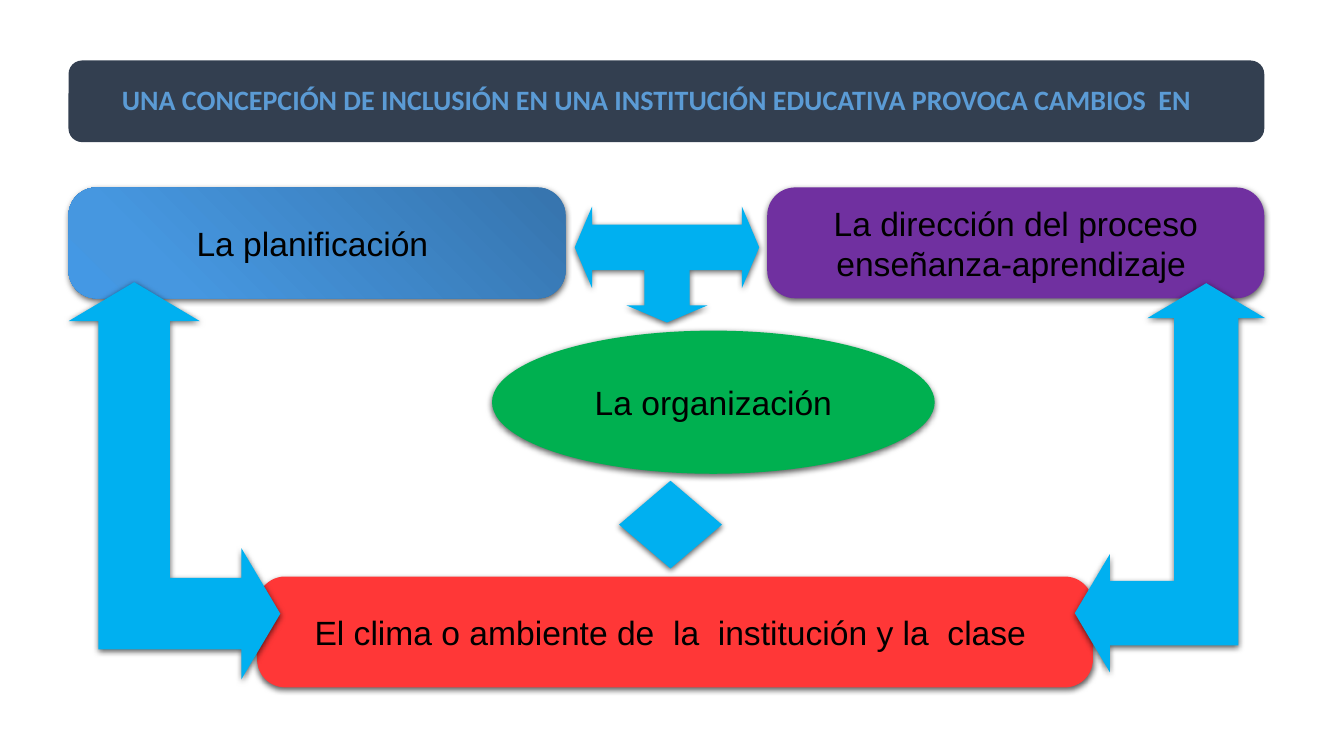
from lxml import etree
from pptx import Presentation
from pptx.dml.color import RGBColor
from pptx.enum.shapes import MSO_SHAPE
from pptx.enum.text import MSO_ANCHOR, PP_ALIGN
from pptx.oxml.ns import qn
from pptx.util import Inches, Pt

ROUNDED = MSO_SHAPE.ROUNDED_RECTANGLE
RECTANGLE = MSO_SHAPE.RECTANGLE
ELLIPSE = MSO_SHAPE.OVAL
THREE_WAY_ARROW = MSO_SHAPE.LEFT_RIGHT_UP_ARROW
VERTICAL_ARROW = MSO_SHAPE.UP_DOWN_ARROW
CORNER_ARROW = MSO_SHAPE.LEFT_UP_ARROW
MIDDLE = MSO_ANCHOR.MIDDLE
CENTER = PP_ALIGN.CENTER

NAVY, ARROW_BLUE = "333F50", "00B0F0"
PURPLE, GREEN, RED = "7030A0", "00B050", "FF3737"
PLANNING_GRADIENT = [(0, "3674AD"), (80, "4697E0"), (100, "4498E4")]

LEFT, RIGHT = 0.68, 12.54
BOX_TOP, BOX_WIDTH, BOX_HEIGHT = 1.86, 4.93, 1.1
BOX_ROUNDING = [0.253]
CORNER_SHAPE = [0.338, 0.31, 0.184]


def color(value):
    return RGBColor.from_string(value)


def add_color_xml(parent, value):
    return etree.SubElement(parent, qn("a:srgbClr"), val=value)


class Diagram:
    label_format = {"name": "Arial", "size": Pt(24), "bold": False}
    title_format = {"name": "Calibri", "size": Pt(20), "bold": True}

    def __init__(self, slide):
        self.slide = slide

    def add_shape(self, kind, box, fill, adjustments=(), rotation=0, shadow=True):
        shape = self.slide.shapes.add_shape(kind, *map(Inches, box))
        shape.rotation = rotation
        for index, value in enumerate(adjustments):
            shape.adjustments[index] = value
        if isinstance(fill, list):
            self.set_gradient(shape, fill)
        else:
            shape.fill.solid()
            shape.fill.fore_color.rgb = color(fill)
        shape.line.fill.background()
        shape.shadow.inherit = False
        if shadow:
            self.add_shadow(shape)
        return shape

    def set_gradient(self, shape, stops):
        shape.fill.gradient()
        shape.fill.gradient_angle = 225
        stop_list = shape._element.spPr.find(".//" + qn("a:gsLst"))
        for stop in list(stop_list):
            stop_list.remove(stop)
        for percent, value in stops:
            stop = etree.SubElement(stop_list, qn("a:gs"), pos=str(percent * 1000))
            add_color_xml(stop, value)

    def add_shadow(self, shape):
        effects = shape._element.spPr.find(qn("a:effectLst"))
        outer = etree.SubElement(
            effects, qn("a:outerShdw"), blurRad=str(Pt(4.5)), dist=str(Pt(1.5)),
            dir="5400000", algn="ctr", rotWithShape="0")
        etree.SubElement(add_color_xml(outer, "000000"), qn("a:alpha"), val="63000")

    def add_text(self, shape, text, font_format, text_color):
        frame = shape.text_frame
        frame.word_wrap = True
        frame.vertical_anchor = MIDDLE
        paragraph = frame.paragraphs[0]
        paragraph.alignment = CENTER
        run = paragraph.add_run()
        run.text = text
        for name, value in font_format.items():
            setattr(run.font, name, value)
        run.font.color.rgb = color(text_color)

    def add_label(self, kind, box, fill, text, adjustments=()):
        shape = self.add_shape(kind, box, fill, adjustments)
        self.add_text(shape, text, self.label_format, "000000")

    def add_arrow(self, kind, box, adjustments, rotation=0):
        self.add_shape(kind, box, ARROW_BLUE, adjustments, rotation)

    def add_title(self, text):
        self.add_shape(ROUNDED, (LEFT, 0.6, RIGHT - LEFT, 0.81), NAVY, shadow=False)
        shape = self.add_shape(RECTANGLE, (0.76, 0.64, 11.71, 0.73), NAVY, shadow=False)
        margins = {"margin_left": 0.23, "margin_top": 0,
                   "margin_right": 0.43, "margin_bottom": 0}
        for name, value in margins.items():
            setattr(shape.text_frame, name, Inches(value))
        self.add_text(shape, text, self.title_format, "5B9BD5")
        shape.text_frame.paragraphs[0].line_spacing = 0.9


def main():
    presentation = Presentation()
    presentation.slide_width = Inches(13.33)
    presentation.slide_height = Inches(7.5)
    diagram = Diagram(presentation.slides.add_slide(presentation.slide_layouts[6]))

    diagram.add_label(ROUNDED, (LEFT, BOX_TOP, BOX_WIDTH, BOX_HEIGHT),
                      PLANNING_GRADIENT, "La planificación ", BOX_ROUNDING)
    diagram.add_label(ROUNDED, (RIGHT - BOX_WIDTH, BOX_TOP, BOX_WIDTH, BOX_HEIGHT),
                      PURPLE, "La dirección del proceso enseñanza-aprendizaje ",
                      BOX_ROUNDING)
    diagram.add_label(ELLIPSE, (4.88, 3.28, 4.39, 1.42), GREEN, "La organización")
    diagram.add_arrow(THREE_WAY_ARROW, (5.7, 2.05, 1.83, 1.15),
                      [0.392, 0.351, 0.149], rotation=180)
    diagram.add_label(ROUNDED, (2.55, 5.72, 8.29, BOX_HEIGHT), RED,
                      "El clima o ambiente de  la  institución y la  clase ",
                      BOX_ROUNDING)
    diagram.add_arrow(VERTICAL_ARROW, (6.14, 4.77, 1.02, 0.87), [0.5, 0.326])
    diagram.add_arrow(CORNER_ARROW, (10.66, 2.81, 1.89, 3.86), CORNER_SHAPE)
    diagram.add_arrow(CORNER_ARROW, (-0.24, 3.72, 3.94, 2.1), CORNER_SHAPE, rotation=90)
    diagram.add_title(
        "UNA CONCEPCIÓN DE INCLUSIÓN EN UNA INSTITUCIÓN EDUCATIVA PROVOCA CAMBIOS  EN")

    presentation.save("out.pptx")


if __name__ == "__main__":
    main()
